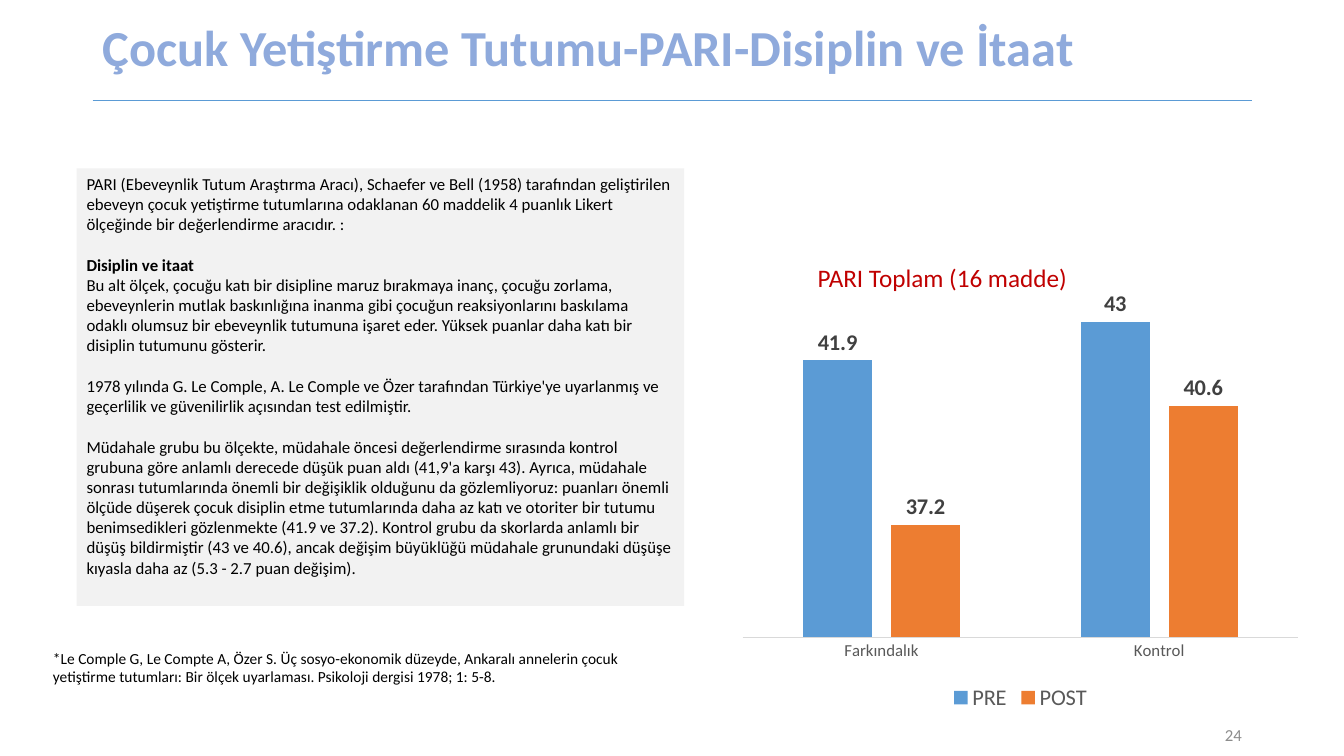
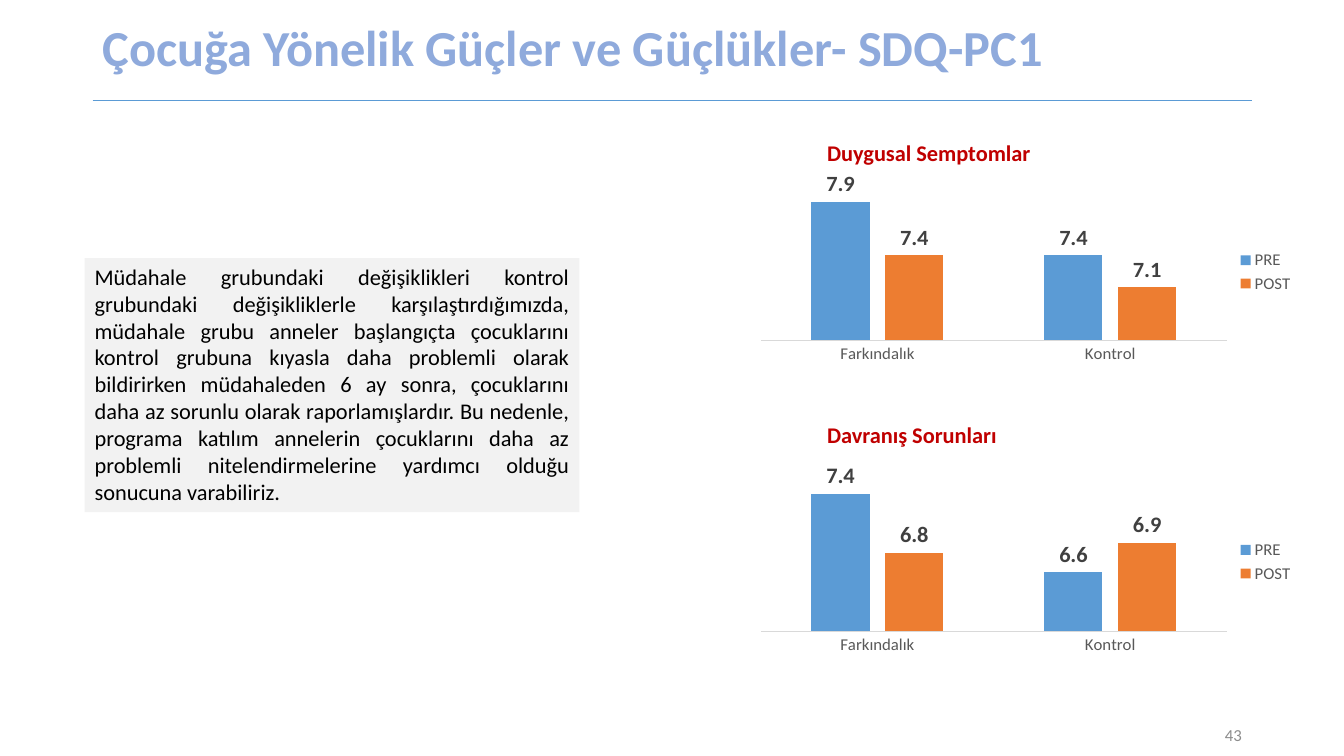
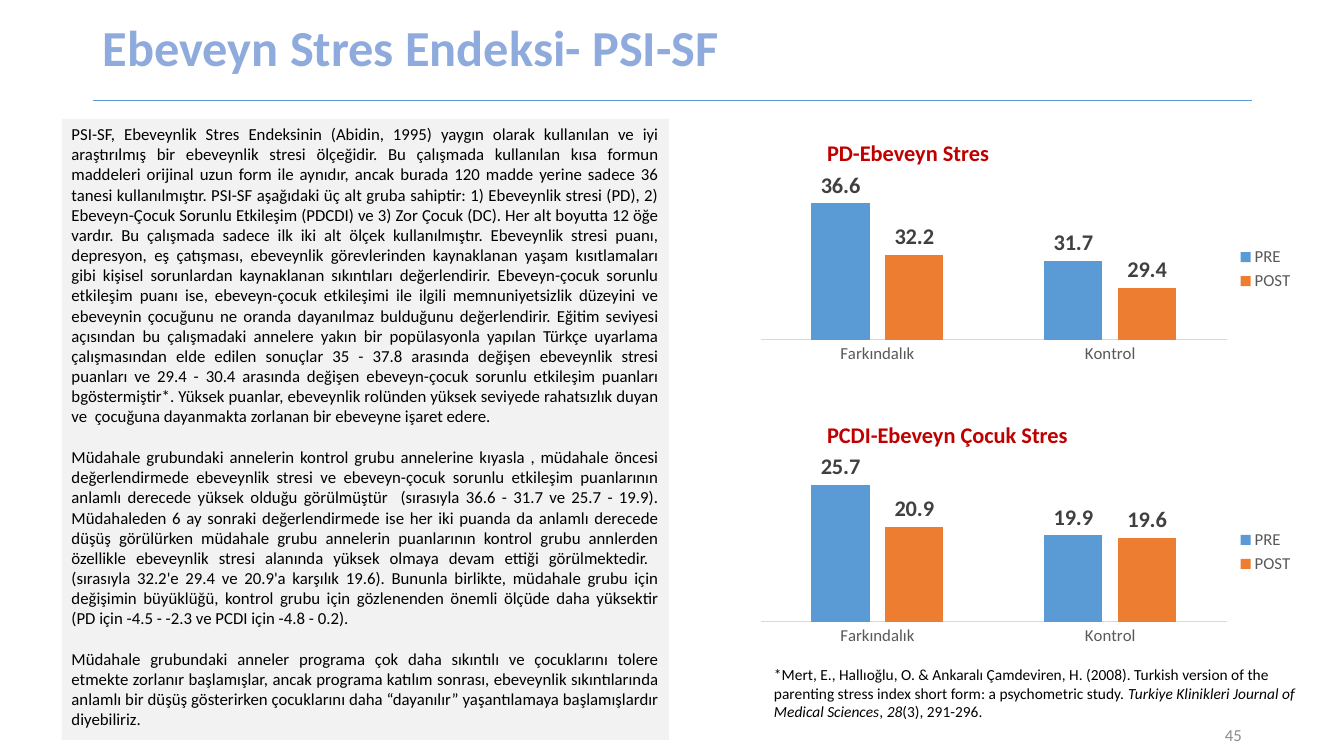
from lxml import etree
from pptx import Presentation
from pptx.chart.data import CategoryChartData
from pptx.dml.color import RGBColor
from pptx.enum.chart import XL_CHART_TYPE as ChartType
from pptx.enum.chart import XL_LABEL_POSITION as LabelPosition
from pptx.enum.chart import XL_LEGEND_POSITION as LegendPosition
from pptx.enum.chart import XL_TICK_MARK as TickMark
from pptx.enum.shapes import MSO_CONNECTOR as Connector
from pptx.enum.shapes import MSO_SHAPE as Shape
from pptx.enum.text import MSO_ANCHOR as Anchor
from pptx.enum.text import MSO_AUTO_SIZE as AutoSize
from pptx.enum.text import PP_ALIGN as Align
from pptx.oxml.ns import qn
from pptx.util import Inches, Pt

# Shared look
FONT = "Calibri"
TITLE_BLUE = RGBColor(0x8F, 0xAA, 0xDC)
BLUE = RGBColor(0x5B, 0x9B, 0xD5)
ORANGE = RGBColor(0xED, 0x7D, 0x31)
RED = RGBColor(0xC0, 0x00, 0x00)
BLACK = RGBColor(0x00, 0x00, 0x00)
PANEL_GREY = RGBColor(0xF2, 0xF2, 0xF2)
LINE_GREY = RGBColor(0xD9, 0xD9, 0xD9)
AXIS_GREY = RGBColor(0x59, 0x59, 0x59)
LABEL_GREY = RGBColor(0x40, 0x40, 0x40)
NUMBER_GREY = RGBColor(0x8C, 0x8C, 0x8C)

SLIDE_WIDTH, SLIDE_HEIGHT = Inches(13.333), Inches(7.5)
LINE_HEIGHT = 1.22

# Shared places, in percent of the slide: left, top, width, height
HEADER_LEFT, HEADER_WIDTH, HEADER_HEIGHT = 6.9, 86.25, 13.33
NUMBER_AREA = (70.65, 94.5, 22.5, 5.33)
CHART_LEFT, CHART_WIDTH, CHART_HEIGHT = 55.8, 41.25, 25.87
CAPTION_LEFT, CAPTION_TOPS = 60.8, (17.73, 55.07)

CATEGORIES = ("Farkındalık", "Kontrol")
SERIES = (("PRE", BLUE), ("POST", ORANGE))

# Slide texts; a paragraph is a string or a list of (text, style) runs
DISCIPLINE_TEXT = [
    "PARI (Ebeveynlik Tutum Araştırma Aracı), Schaefer ve Bell (1958) tarafından geliştirilen ebeveyn çocuk yetiştirme tutumlarına odaklanan 60 maddelik 4 puanlık Likert ölçeğinde bir değerlendirme aracıdır. :",
    [("Disiplin ve itaat", "bold")],
    "Bu alt ölçek, çocuğu katı bir disipline maruz bırakmaya inanç, çocuğu zorlama, ebeveynlerin mutlak baskınlığına inanma gibi çocuğun reaksiyonlarını baskılama odaklı olumsuz bir ebeveynlik tutumuna işaret eder. Yüksek puanlar daha katı bir disiplin tutumunu gösterir.",
    "1978 yılında G. Le Comple, A. Le Comple ve Özer tarafından Türkiye'ye uyarlanmış ve geçerlilik ve güvenilirlik açısından test edilmiştir.",
    "Müdahale grubu bu ölçekte, müdahale öncesi değerlendirme sırasında kontrol grubuna göre anlamlı derecede düşük puan aldı (41,9'a karşı 43). Ayrıca, müdahale sonrası tutumlarında önemli bir değişiklik olduğunu da gözlemliyoruz: puanları önemli ölçüde düşerek çocuk disiplin etme tutumlarında daha az katı ve otoriter bir tutumu benimsedikleri gözlenmekte (41.9 ve 37.2). Kontrol grubu da skorlarda anlamlı bir düşüş bildirmiştir (43 ve 40.6), ancak değişim büyüklüğü müdahale grunundaki düşüşe kıyasla daha az (5.3 - 2.7 puan değişim).",
]
DISCIPLINE_SOURCE = [
    "*Le Comple G, Le Compte A, Özer S. Üç sosyo-ekonomik düzeyde, Ankaralı annelerin çocuk yetiştirme tutumları: Bir ölçek uyarlaması. Psikoloji dergisi 1978; 1: 5-8.",
]
STRENGTHS_TEXT = [
    "Müdahale grubundaki değişiklikleri kontrol grubundaki değişikliklerle karşılaştırdığımızda, müdahale grubu anneler başlangıçta çocuklarını kontrol grubuna kıyasla daha problemli olarak bildirirken müdahaleden 6 ay sonra, çocuklarını daha az sorunlu olarak raporlamışlardır. Bu nedenle, programa katılım annelerin çocuklarını daha az problemli nitelendirmelerine yardımcı olduğu sonucuna varabiliriz.",
]
STRESS_SCALE = (
    "PSI-SF, Ebeveynlik Stres Endeksinin (Abidin, 1995) yaygın olarak kullanılan ve iyi araştırılmış bir ebeveynlik stresi ölçeğidir. Bu çalışmada kullanılan kısa formun maddeleri orijinal uzun form ile aynıdır, ancak burada 120 madde yerine sadece 36 tanesi kullanılmıştır. PSI-SF aşağıdaki üç alt gruba sahiptir: 1) Ebeveynlik stresi (PD), 2) Ebeveyn-Çocuk Sorunlu Etkileşim (PDCDI) ve 3) Zor Çocuk (DC). Her alt boyutta 12 öğe vardır. Bu çalışmada sadece ilk iki alt ölçek kullanılmıştır.",
    "Ebeveynlik stresi puanı, depresyon, eş çatışması, ebeveynlik görevlerinden kaynaklanan yaşam kısıtlamaları gibi kişisel sorunlardan kaynaklanan sıkıntıları değerlendirir. Ebeveyn-çocuk sorunlu etkileşim puanı ise, ebeveyn-çocuk etkileşimi ile ilgili memnuniyetsizlik düzeyini ve ebeveynin çocuğunu ne oranda dayanılmaz bulduğunu değerlendirir.",
    "Eğitim seviyesi açısından bu çalışmadaki annelere yakın bir popülasyonla yapılan Türkçe uyarlama çalışmasından elde edilen sonuçlar 35 - 37.8 arasında değişen ebeveynlik stresi puanları ve 29.4 - 30.4 arasında değişen ebeveyn-çocuk sorunlu etkileşim puanları bgöstermiştir*. Yüksek puanlar, ebeveynlik rolünden yüksek seviyede rahatsızlık duyan ve  çocuğuna dayanmakta zorlanan bir ebeveyne işaret edere.",
)
STRESS_RESULTS = (
    "Müdahale grubundaki annelerin kontrol grubu annelerine kıyasla , müdahale öncesi değerlendirmede ebeveynlik stresi ve ebeveyn-çocuk sorunlu etkileşim puanlarının anlamlı derecede yüksek olduğu görülmüştür  (sırasıyla 36.6 - 31.7 ve 25.7 - 19.9).",
    "Müdahaleden 6 ay sonraki değerlendirmede ise her iki puanda da anlamlı derecede düşüş görülürken müdahale grubu annelerin puanlarının kontrol grubu annlerden özellikle ebeveynlik stresi alanında yüksek olmaya devam ettiği görülmektedir.  (sırasıyla 32.2'e 29.4 ve 20.9'a karşılık 19.6).",
    "Bununla birlikte, müdahale grubu için değişimin büyüklüğü, kontrol grubu için gözlenenden önemli ölçüde daha yüksektir (PD için -4.5 - -2.3 ve PCDI için -4.8 - 0.2).",
)
STRESS_TEXT = [
    " ".join(STRESS_SCALE),
    " ".join(STRESS_RESULTS),
    "Müdahale grubundaki anneler programa çok daha sıkıntılı ve çocuklarını tolere etmekte zorlanır başlamışlar, ancak programa katılım sonrası, ebeveynlik sıkıntılarında anlamlı bir düşüş gösterirken çocuklarını daha “dayanılır” yaşantılamaya başlamışlardır diyebiliriz.",
]
STRESS_SOURCE = [[
    ("*Mert, E., Hallıoğlu, O. & Ankaralı Çamdeviren, H. (2008). Turkish version of the parenting stress index short form: a psychometric study. ", ""),
    ("Turkiye Klinikleri Journal of Medical Sciences", "italic"),
    (", ", ""),
    ("28", "italic"),
    ("(3), 291-296.", ""),
]]


def place(left, top, width, height):
    """Turn percentages of the slide into lengths."""
    return (int(SLIDE_WIDTH * left / 100), int(SLIDE_HEIGHT * top / 100),
            int(SLIDE_WIDTH * width / 100), int(SLIDE_HEIGHT * height / 100))


def style_font(font, size, color, bold=False, italic=False):
    font.name, font.size = FONT, Pt(size)
    font.bold, font.italic = bold, italic
    font.color.rgb = color


def write(text_frame, paragraphs, size, color=BLACK, bold=False, align=Align.LEFT):
    """Write paragraphs one line apart; a bold heading stays with its text."""
    after_heading = True
    for index, content in enumerate(paragraphs):
        paragraph = text_frame.paragraphs[0] if index == 0 else text_frame.add_paragraph()
        paragraph.alignment = align
        if not after_heading:
            paragraph.space_before = Pt(round(size * LINE_HEIGHT, 2))
        runs = [(content, "")] if isinstance(content, str) else content
        for text, style in runs:
            run = paragraph.add_run()
            run.text = text
            style_font(run.font, size, color, bold or style == "bold", style == "italic")
        after_heading = runs[-1][1] == "bold"


def add_text(slide, area, paragraphs, size, wrap=True, **style):
    text_frame = slide.shapes.add_textbox(*place(*area)).text_frame
    text_frame.word_wrap = wrap
    write(text_frame, paragraphs, size, **style)
    return text_frame


def add_panel(slide, area, paragraphs, size, align=Align.JUSTIFY):
    panel = slide.shapes.add_shape(Shape.RECTANGLE, *place(*area))
    panel.shadow.inherit = False
    panel.fill.solid()
    panel.fill.fore_color.rgb = PANEL_GREY
    panel.line.fill.background()
    panel.text_frame.word_wrap = True
    panel.text_frame.vertical_anchor = Anchor.TOP
    write(panel.text_frame, paragraphs, size, align=align)


def set_plot_area(chart, **shares):
    """Fix the inner plot area, in shares of the chart."""
    plot_area = chart._chartSpace.chart.plotArea
    for old_layout in plot_area.findall(qn("c:layout")):
        plot_area.remove(old_layout)
    layout = etree.Element(qn("c:layout"))
    manual = etree.SubElement(layout, qn("c:manualLayout"))
    settings = {"layoutTarget": "inner", "xMode": "edge", "yMode": "edge", **shares}
    for name, value in settings.items():
        etree.SubElement(manual, qn("c:" + name)).set("val", str(value))
    plot_area.insert(0, layout)


def add_column_chart(slide, area, pre, post, scale, legend=LegendPosition.RIGHT,
                     legend_size=12, plot_width=0.84, plot_height=0.84):
    data = CategoryChartData()
    data.categories = CATEGORIES
    for (name, _), values in zip(SERIES, (pre, post)):
        data.add_series(name, values)
    chart = slide.shapes.add_chart(ChartType.COLUMN_CLUSTERED, *place(*area), data).chart
    style_font(chart.font, 10, BLACK)
    chart.has_title = False
    set_plot_area(chart, x=0.02, y=0.02, w=plot_width, h=plot_height)

    # Legend
    chart.has_legend = True
    chart.legend.position = legend
    chart.legend.include_in_layout = False
    style_font(chart.legend.font, legend_size, AXIS_GREY)

    # Axes
    category_axis, value_axis = chart.category_axis, chart.value_axis
    category_axis.major_tick_mark = TickMark.NONE
    category_axis.format.line.color.rgb = LINE_GREY
    category_axis.format.line.width = Pt(0.75)
    style_font(category_axis.tick_labels.font, 12, AXIS_GREY)
    value_axis.visible = False
    value_axis.has_major_gridlines = False
    value_axis.minimum_scale, value_axis.maximum_scale = scale

    # Columns and their values
    plot = chart.plots[0]
    plot.gap_width, plot.overlap = 174, -27
    plot.vary_by_categories = False
    for series, (_, color) in zip(plot.series, SERIES):
        series.format.fill.solid()
        series.format.fill.fore_color.rgb = color
        labels = series.data_labels
        labels.show_value = True
        labels.position = LabelPosition.OUTSIDE_END
        style_font(labels.font, 16, LABEL_GREY, bold=True)


def add_chart_pair(slide, tops, charts):
    """Stack two small charts, each under its red caption."""
    for top, caption_top, (caption, pre, post, scale) in zip(tops, CAPTION_TOPS, charts):
        add_column_chart(slide, (CHART_LEFT, top, CHART_WIDTH, CHART_HEIGHT),
                         pre, post, scale)
        add_text(slide, (CAPTION_LEFT, caption_top, 20, 4.93), [caption], 16,
                 wrap=False, color=RED, bold=True)


def add_slide(presentation, title, number):
    """Add a slide with its title, rule and page number."""
    slide = presentation.slides.add_slide(presentation.slide_layouts[5])
    heading = slide.shapes.title
    heading.left, heading.top, heading.width, heading.height = place(
        HEADER_LEFT, 0, HEADER_WIDTH, HEADER_HEIGHT)
    text_frame = heading.text_frame
    text_frame.text = title
    text_frame.auto_size = AutoSize.NONE
    text_frame.vertical_anchor = Anchor.MIDDLE
    paragraph = text_frame.paragraphs[0]
    paragraph.alignment, paragraph.line_spacing = Align.LEFT, 0.9
    style_font(paragraph.runs[0].font, 36, TITLE_BLUE, bold=True)

    left, top, width, _ = place(HEADER_LEFT, HEADER_HEIGHT, HEADER_WIDTH, 0)
    rule = slide.shapes.add_connector(Connector.STRAIGHT, left, top, left + width, top)
    rule.line.color.rgb = BLUE
    rule.line.width = Pt(0.5)
    etree.SubElement(rule._element.spPr, qn("a:effectLst"))

    number_frame = add_text(slide, NUMBER_AREA, [str(number)], 12,
                            color=NUMBER_GREY, align=Align.RIGHT)
    number_frame.vertical_anchor = Anchor.MIDDLE
    return slide


def build_discipline(presentation):
    slide = add_slide(presentation, "Çocuk Yetiştirme Tutumu-PARI-Disiplin ve İtaat", 24)
    add_column_chart(slide, (54.4, 36.8, 43.05, 57.9), (41.9, 43), (37.2, 40.6), (34, 44),
                     LegendPosition.BOTTOM, legend_size=16, plot_width=0.96, plot_height=0.8)
    add_panel(slide, (5.7, 22.27, 45.2, 57.87), DISCIPLINE_TEXT, 12, Align.LEFT)
    add_text(slide, (60.1, 34, 20.25, 5.33), ["PARI Toplam (16 madde)"], 18,
             wrap=False, color=RED)
    add_text(slide, (3.2, 85.2, 45.2, 6.27), DISCIPLINE_SOURCE, 11)


def build_strengths(presentation):
    slide = add_slide(presentation, "Çocuğa Yönelik Güçler ve Güçlükler- SDQ-PC1", 43)
    add_chart_pair(slide, (22.67, 61.2), (
        ("Duygusal Semptomlar", (7.9, 7.4), (7.4, 7.1), (6.6, 8.1)),
        ("Davranış Sorunları", (7.4, 6.6), (6.8, 6.9), (6, 7.65)),
    ))
    add_panel(slide, (6.3, 34.13, 36.8, 33.6), STRENGTHS_TEXT, 16)


def build_stress(presentation):
    slide = add_slide(presentation, "Ebeveyn Stres Endeksi- PSI-SF", 45)
    add_panel(slide, (4.58, 15.73, 45.2, 82.13), STRESS_TEXT, 12)
    add_text(slide, (56.85, 87.33, 41.3, 8.8), STRESS_SOURCE, 11)
    add_chart_pair(slide, (22.67, 60), (
        ("PD-Ebeveyn Stres", (36.6, 31.7), (32.2, 29.4), (25, 39)),
        ("PCDI-Ebeveyn Çocuk Stres", (25.7, 19.9), (20.9, 19.6), (10, 28.7)),
    ))


def main():
    presentation = Presentation()
    presentation.slide_width, presentation.slide_height = SLIDE_WIDTH, SLIDE_HEIGHT
    build_discipline(presentation)
    build_strengths(presentation)
    build_stress(presentation)
    presentation.save("out.pptx")


if __name__ == "__main__":
    main()
